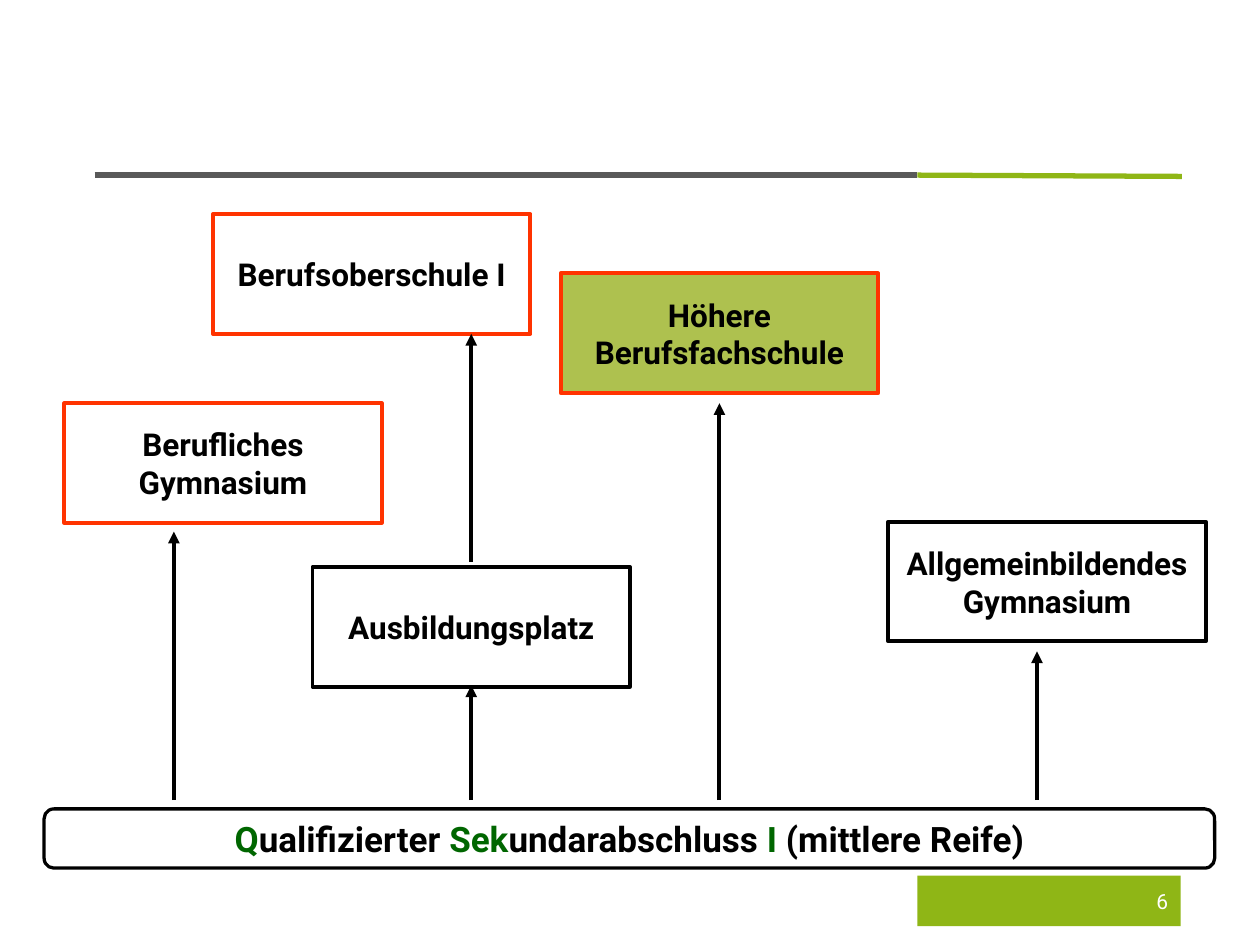
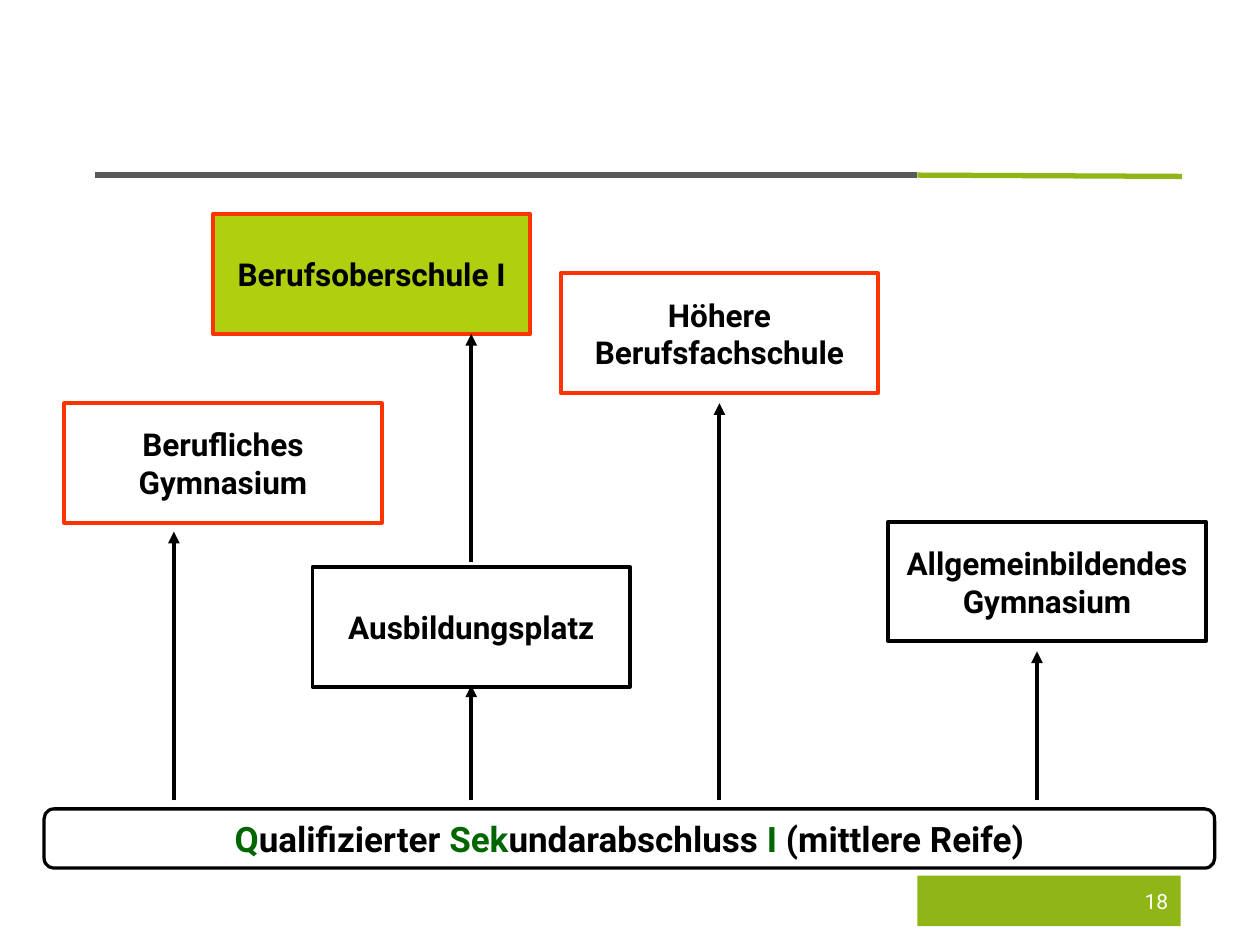
from pptx import Presentation
from pptx.dml.color import RGBColor
from pptx.enum.shapes import MSO_CONNECTOR, MSO_SHAPE
from pptx.enum.text import MSO_ANCHOR, PP_ALIGN
from pptx.oxml.ns import qn
from pptx.util import Inches, Pt
from lxml.etree import SubElement

BLACK = RGBColor(0x00, 0x00, 0x00)
WHITE = RGBColor(0xFF, 0xFF, 0xFF)
GRAY = RGBColor(0x59, 0x59, 0x59)
GREEN = RGBColor(0x8F, 0xB6, 0x16)
DARK_GREEN = RGBColor(0x00, 0x66, 0x00)
OLIVE = RGBColor(0xAE, 0xC1, 0x4F)
LIME = RGBColor(0xAF, 0xCF, 0x0F)
RED = RGBColor(0xFF, 0x33, 0x00)

BOX_W, BOX_H = 2.52, 0.95
ARROW_START = 6.35

SCHOOLS = [
    (7.05, 4.14, BLACK, ["Allgemeinbildendes", "Gymnasium"]),
    (2.48, 4.5, BLACK, ["Ausbildungsplatz"]),
    (0.51, 3.2, RED, ["Berufliches", "Gymnasium"]),
    (4.45, 2.17, RED, ["Höhere", "Berufsfachschule"]),
    (1.69, 1.7, RED, ["Berufsoberschule I"]),
]
ARROWS = [
    (3.74, ARROW_START, 5.44),
    (1.38, ARROW_START, 4.22),
    (5.71, ARROW_START, 3.2),
    (8.23, ARROW_START, 5.17),
    (3.74, 4.46, 2.65),
]
DEGREE = [
    ("Q", DARK_GREEN),
    ("ualifizierter ", BLACK),
    ("Sek", DARK_GREEN),
    ("undarabschluss ", BLACK),
    ("I", DARK_GREEN),
    (" (mittlere Reife)", BLACK),
]
SLIDES = [(6, "Höhere", OLIVE), (18, "Berufsoberschule I", LIME)]


class Deck:
    font = "Roboto"

    def __init__(self):
        self.prs = Presentation()
        self.prs.slide_width = Inches(10)
        self.prs.slide_height = Inches(7.5)
        self.s = None

    def new_slide(self):
        self.s = self.prs.slides.add_slide(self.prs.slide_layouts[6])
        self.line(7.28, 1.39, 9.38, 1.4, GREEN, 3)
        self.line(0.75, 1.39, 7.28, 1.39, GRAY, 3)

    def line(self, x1, y1, x2, y2, color, width, arrow=False):
        c = self.s.shapes.add_connector(
            MSO_CONNECTOR.STRAIGHT, Inches(x1), Inches(y1), Inches(x2), Inches(y2))
        c.line.color.rgb = color
        c.line.width = Pt(width)
        if arrow:
            SubElement(c.line._get_or_add_ln(), qn("a:tailEnd"), type="triangle")
        SubElement(c._element.spPr, qn("a:effectLst"))

    def shape(self, kind, x, y, w, h, fill, border=None, width=2.25):
        sp = self.s.shapes.add_shape(kind, Inches(x), Inches(y), Inches(w), Inches(h))
        sp.shadow.inherit = False
        sp.fill.solid()
        sp.fill.fore_color.rgb = fill
        if border is None:
            sp.line.fill.background()
        else:
            sp.line.color.rgb = border
            sp.line.width = Pt(width)
        return sp

    def text(self, sp, paragraphs, size, bold=True, align=PP_ALIGN.CENTER, wrap=True):
        tf = sp.text_frame
        tf.word_wrap = wrap
        tf.vertical_anchor = MSO_ANCHOR.MIDDLE
        for i, runs in enumerate(paragraphs):
            p = tf.add_paragraph() if i else tf.paragraphs[0]
            p.alignment = align
            for content, color in runs:
                r = p.add_run()
                r.text = content
                r.font.name = self.font
                r.font.size = Pt(size)
                r.font.bold = bold
                r.font.color.rgb = color

    def school(self, x, y, border, lines, fill):
        sp = self.shape(MSO_SHAPE.RECTANGLE, x, y, BOX_W, BOX_H, fill, border)
        self.text(sp, [[(text, BLACK)] for text in lines], 18, wrap=False)

    def degree_bar(self):
        sp = self.shape(MSO_SHAPE.ROUNDED_RECTANGLE, 0.35, 6.42, 9.29, 0.47,
                        WHITE, BLACK, 1.88)
        sp.adjustments[0] = 0.165
        self.text(sp, [DEGREE], 20)

    def page_number(self, number):
        sp = self.shape(MSO_SHAPE.RECTANGLE, 7.28, 6.95, 2.09, 0.4, GREEN)
        self.text(sp, [[(str(number), WHITE)]], 12, bold=False, align=PP_ALIGN.RIGHT)


def main():
    deck = Deck()
    for number, highlighted, color in SLIDES:
        deck.new_slide()
        deck.degree_bar()
        for x, y, border, lines in SCHOOLS:
            deck.school(x, y, border, lines, color if lines[0] == highlighted else WHITE)
        for x, start, end in ARROWS:
            deck.line(x, start, x, end, BLACK, 2.25, arrow=True)
        deck.page_number(number)
    deck.prs.save("out.pptx")


if __name__ == "__main__":
    main()
